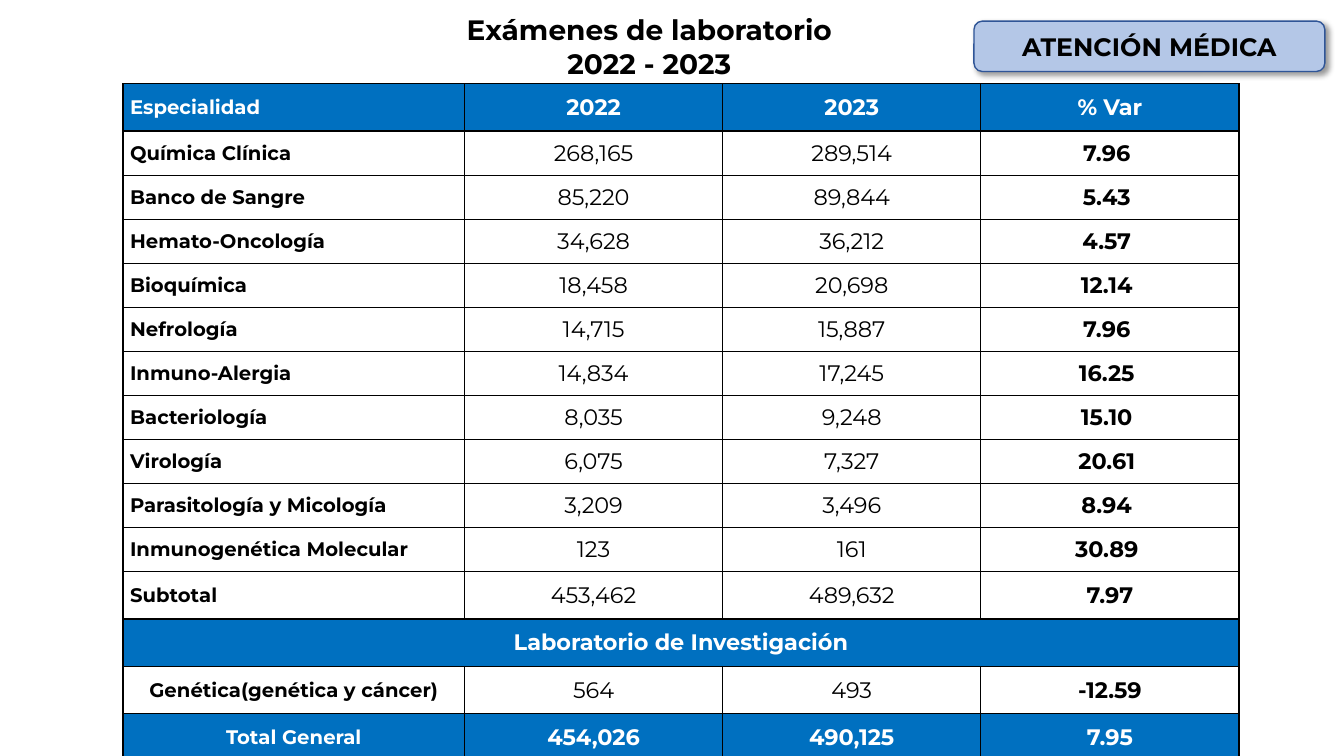
from lxml.etree import SubElement
from pptx import Presentation
from pptx.dml.color import RGBColor
from pptx.enum.shapes import MSO_SHAPE
from pptx.enum.text import MSO_ANCHOR, MSO_AUTO_SIZE, PP_ALIGN
from pptx.oxml import parse_xml
from pptx.oxml.ns import nsdecls, qn
from pptx.util import Inches, Pt

BLACK = RGBColor(0x00, 0x00, 0x00)
WHITE = RGBColor(0xFF, 0xFF, 0xFF)
BLUE = RGBColor(0x00, 0x70, 0xC0)
PALE_BLUE = RGBColor(0xB4, 0xC7, 0xE7)
NAVY = RGBColor(0x2F, 0x55, 0x97)
FONT = "Montserrat"

TITLE_BOX = (3.3, 0.09, 6.36, 0.74)
BADGE_BOX = (9.66, 0.21, 3.48, 0.5)
EXAMS_BOX = (1.22, 0.83, 11.07, 6.67)
COLUMN_SHARES = (0.306, 0.2313, 0.2313, 0.2313)
TALL_ROW, EXAM_ROW = 0.07, 0.065  # shares of the table height

HEADER = ("Especialidad", "2022", "2023", "% Var")
EXAMS = [
    ("Química Clínica", "268,165", "289,514", "7.96 "),
    ("Banco de Sangre", "85,220", "89,844", "5.43 "),
    ("Hemato-Oncología", "34,628", "36,212", "4.57 "),
    ("Bioquímica", "18,458", "20,698", "12.14 "),
    ("Nefrología", "14,715", "15,887", "7.96 "),
    ("Inmuno-Alergia", "14,834", "17,245", "16.25 "),
    ("Bacteriología", "8,035", "9,248", "15.10 "),
    ("Virología", "6,075", "7,327", "20.61 "),
    ("Parasitología y Micología", "3,209", "3,496", "8.94 "),
    ("Inmunogenética Molecular", "123", "161", "30.89 "),
]
SUBTOTAL = ("Subtotal", "453,462", "489,632", "7.97")
RESEARCH = ("Laboratorio de Investigación", "", "", "")
GENETICS = ("Genética(genética y cáncer)", "564", "493", "-12.59")
TOTAL = ("Total General", "454,026", "490,125", "7.95")


def set_attributes(target, values):
    for name, value in values.items():
        setattr(target, name, value)


def write(frame, lines, size, color=BLACK, bold=True, align=PP_ALIGN.CENTER):
    """Fill a text frame with one formatted paragraph per line."""
    for index, line in enumerate(lines):
        paragraph = frame.add_paragraph() if index else frame.paragraphs[0]
        paragraph.alignment = align
        run = paragraph.add_run()
        run.text = line
        set_attributes(run.font, {"name": FONT, "size": Pt(size), "bold": bold})
        run.font.color.rgb = color


def add_title(slide, box):
    title = slide.shapes.title
    set_attributes(title, dict(zip(("left", "top", "width", "height"), map(Inches, box))))
    set_attributes(title.text_frame, {
        "auto_size": MSO_AUTO_SIZE.NONE, "word_wrap": True,
        "vertical_anchor": MSO_ANCHOR.MIDDLE})
    write(title.text_frame, ("Exámenes de laboratorio ", "2022 - 2023 "), 20)


def add_badge(slide, box):
    badge = slide.shapes.add_shape(MSO_SHAPE.ROUNDED_RECTANGLE, *map(Inches, box))
    badge.fill.solid()
    badge.fill.fore_color.rgb = PALE_BLUE
    badge.line.color.rgb = NAVY
    badge.line.width = Pt(1)
    badge.text_frame.vertical_anchor = MSO_ANCHOR.MIDDLE
    write(badge.text_frame, ("ATENCIÓN MÉDICA",), 18)
    # Soft shadow towards the lower right
    badge.shadow.inherit = False
    effects = badge.element.spPr.find(qn("a:effectLst"))
    effects.append(parse_xml(
        f'<a:outerShdw {nsdecls("a")} blurRad="{Pt(4)}" dist="{Pt(3)}" dir="2700000" '
        f'algn="tl" rotWithShape="0"><a:srgbClr val="{BLACK}"><a:alpha val="40000"/>'
        '</a:srgbClr></a:outerShdw>'))


def add_borders(cell):
    properties = cell._tc.get_or_add_tcPr()
    for side in ("a:lnL", "a:lnR", "a:lnT", "a:lnB"):
        border = SubElement(properties, qn(side), w=str(Pt(1)))
        fill = SubElement(border, qn("a:solidFill"))
        SubElement(fill, qn("a:srgbClr"), val=str(BLACK))


def format_cell(cell, text, record, column):
    banner = record in (HEADER, RESEARCH, TOTAL)
    # Exam figures sit in cells without vertical margins
    margin = Inches(0 if record in EXAMS and column else 0.1)
    set_attributes(cell, {
        "margin_left": Inches(0.07), "margin_right": Inches(0.07),
        "margin_top": margin, "margin_bottom": margin,
        "vertical_anchor": MSO_ANCHOR.MIDDLE})
    add_borders(cell)
    if banner:
        cell.fill.solid()
        cell.fill.fore_color.rgb = BLUE
    else:
        cell.fill.background()
    label = column == 0 and record is not RESEARCH
    left = label and record not in (GENETICS, TOTAL)
    write(cell.text_frame, (text,), 14 if label else 16,
          color=WHITE if banner else BLACK,
          bold=banner or column in (0, 3),
          align=PP_ALIGN.LEFT if left else PP_ALIGN.CENTER)


def add_exams_table(slide, box):
    records = [HEADER, *EXAMS, SUBTOTAL, RESEARCH, GENETICS, TOTAL]
    left, top, width, height = map(Inches, box)
    exams = slide.shapes.add_table(
        len(records), len(HEADER), left, top, width, height).table
    set_attributes(exams, {"first_row": False, "horz_banding": False})
    for column, share in zip(exams.columns, COLUMN_SHARES):
        column.width = int(width * share)
    for row, record in enumerate(records):
        share = EXAM_ROW if record in EXAMS else TALL_ROW
        exams.rows[row].height = int(height * share)
        for column, text in enumerate(record):
            format_cell(exams.cell(row, column), text, record, column)
    # The research heading spans the whole width
    research_row = records.index(RESEARCH)
    exams.cell(research_row, 0).merge(exams.cell(research_row, len(HEADER) - 1))


def main():
    deck = Presentation()
    set_attributes(deck, {"slide_width": Inches(13.33), "slide_height": Inches(7.5)})
    slide = deck.slides.add_slide(deck.slide_layouts[5])
    add_title(slide, TITLE_BOX)
    add_exams_table(slide, EXAMS_BOX)
    add_badge(slide, BADGE_BOX)
    deck.save("out.pptx")


if __name__ == "__main__":
    main()
